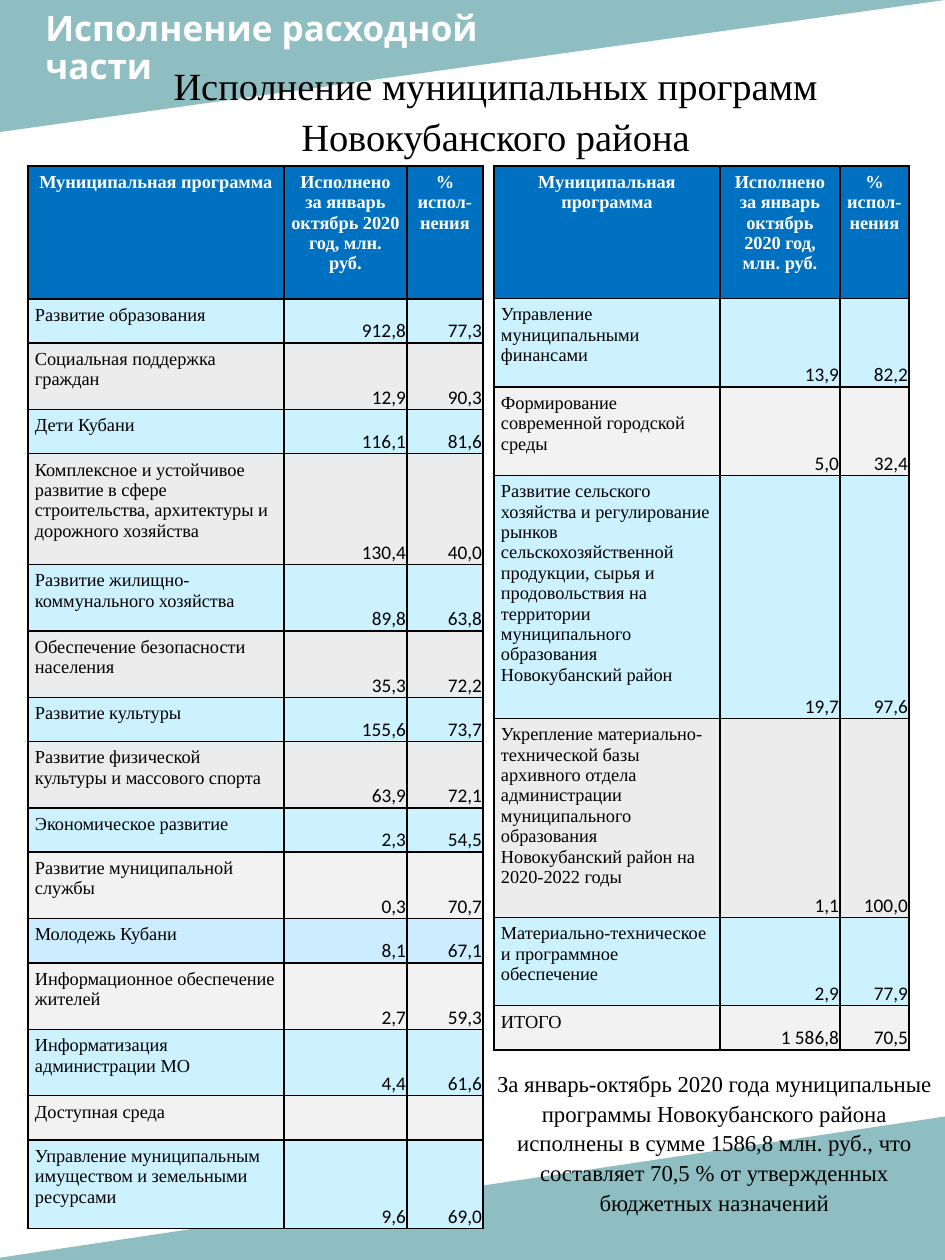
from lxml.etree import SubElement
from pptx import Presentation
from pptx.dml.color import RGBColor
from pptx.enum.shapes import MSO_SHAPE
from pptx.enum.text import MSO_ANCHOR, MSO_AUTO_SIZE, PP_ALIGN
from pptx.oxml.ns import qn
from pptx.util import Pt

SCALE = 914400 / 126
TEAL = RGBColor(0x51, 0x9A, 0xA0)
BLUE = RGBColor(0x00, 0x70, 0xC0)
AQUA = RGBColor(0xCD, 0xF2, 0xFF)
SKY = RGBColor(0xCC, 0xEC, 0xFF)
GRAY = RGBColor(0xEC, 0xEC, 0xEC)
PALE = RGBColor(0xF2, 0xF2, 0xF2)
WHITE = RGBColor(0xFF, 0xFF, 0xFF)
BLACK = RGBColor(0x00, 0x00, 0x00)

SERIF = "Times New Roman"
HEAD = {"name": SERIF, "size": Pt(10.5), "bold": True, "color": WHITE}
NAME = {"name": SERIF, "size": Pt(10.5), "bold": False, "color": BLACK}
VALUE = {"name": "Calibri", "size": Pt(11), "bold": False, "color": BLACK}
BANNER = {"name": "Karla", "size": Pt(20), "bold": True, "color": WHITE}
TITLE = {"name": SERIF, "size": Pt(22), "bold": False, "color": BLACK}
NOTE = {"name": SERIF, "size": Pt(13), "bold": False, "color": BLACK}

HEADER = ("Муниципальная программа",
          "Исполнено за январь октябрь 2020 год, млн. руб.",
          "% испол-нения", 5, BLUE)
LEFT_ROWS = [
    ("Развитие образования", "912,8", "77,3", 1, AQUA),
    ("Социальная поддержка граждан", "12,9", "90,3", 2, GRAY),
    ("Дети Кубани", "116,1", "81,6", 1, AQUA),
    ("Комплексное и устойчивое развитие в сфере строительства, архитектуры "
     "и дорожного хозяйства", "130,4", "40,0", 4, GRAY),
    ("Развитие жилищно-коммунального хозяйства", "89,8", "63,8", 2, AQUA),
    ("Обеспечение безопасности населения", "35,3", "72,2", 2, GRAY),
    ("Развитие культуры", "155,6", "73,7", 1, AQUA),
    ("Развитие физической культуры и массового спорта", "63,9", "72,1", 2, GRAY),
    ("Экономическое развитие", "2,3", "54,5", 1, AQUA),
    ("Развитие муниципальной службы", "0,3", "70,7", 2, PALE),
    ("Молодежь Кубани", "8,1", "67,1", 1, SKY),
    ("Информационное обеспечение жителей", "2,7", "59,3", 2, PALE),
    ("Информатизация администрации МО", "4,4", "61,6", 2, AQUA),
    ("Доступная среда", "", "", 1, PALE),
    ("Управление муниципальным имуществом и земельными ресурсами",
     "9,6", "69,0", 3, AQUA),
]
RIGHT_ROWS = [
    ("Управление муниципальными финансами", "13,9", "82,2", 3, AQUA),
    ("Формирование современной городской среды", "5,0", "32,4", 3, PALE),
    ("Развитие сельского хозяйства и регулирование рынков "
     "сельскохозяйственной продукции, сырья и продовольствия на территории "
     "муниципального образования Новокубанский район", "19,7", "97,6", 10, AQUA),
    ("Укрепление материально-технической базы архивного отдела администрации "
     "муниципального образования Новокубанский район на 2020-2022 годы",
     "1,1", "100,0", 8, GRAY),
    ("Материально-техническое и программное обеспечение", "2,9", "77,9", 3, AQUA),
    ("ИТОГО", "1 586,8", "70,5", 1, PALE),
]


def px(n):
    """Turn px into EMU."""
    return round(n * SCALE)


def place(sp, box):
    """Move a shape to a px box."""
    for key, n in zip(("left", "top", "width", "height"), box):
        setattr(sp, key, px(n))


def write(tf, lines, fmt, align, spacing=1.0):
    """Fill a text frame with one formatted paragraph per line."""
    for i, line in enumerate(lines):
        p = tf.add_paragraph() if i else tf.paragraphs[0]
        p.alignment, p.line_spacing = align, spacing
        if not line:
            continue
        r = p.add_run()
        r.text = line
        for key, value in fmt.items():
            if key == "color":
                r.font.color.rgb = value
            else:
                setattr(r.font, key, value)


def triangle(s, box, flip):
    """Draw a translucent corner triangle, turned and flipped."""
    sp = s.shapes.add_shape(MSO_SHAPE.RIGHT_TRIANGLE, *map(px, box))
    sp.shadow.inherit = False
    sp.rotation = 180
    sp._element.spPr.find(qn("a:xfrm")).set(flip, "1")
    sp.fill.solid()
    sp.fill.fore_color.rgb = TEAL
    color = next(sp._element.spPr.iter(qn("a:srgbClr")))
    SubElement(color, qn("a:alpha"), val="64000")
    sp.line.fill.background()


def text_block(sp, box, lines, fmt, align, spacing):
    """Set wrapped, top-anchored text in a box or placeholder."""
    place(sp, box)
    tf = sp.text_frame
    tf.word_wrap = True
    tf.auto_size = MSO_AUTO_SIZE.NONE
    tf.vertical_anchor = MSO_ANCHOR.TOP
    write(tf, lines, fmt, align, spacing)


def border(cell):
    """Outline a cell in thin black."""
    tc_pr = cell._tc.get_or_add_tcPr()
    for side in ("lnL", "lnR", "lnT", "lnB"):
        ln = SubElement(tc_pr, qn(f"a:{side}"), w=str(Pt(0.96)))
        fill = SubElement(ln, qn("a:solidFill"))
        SubElement(fill, qn("a:srgbClr"), val=str(BLACK))


def fill_cell(cell, text, color, fmt, align, anchor, margins):
    """Format one table cell and write its text."""
    border(cell)
    cell.fill.solid()
    cell.fill.fore_color.rgb = color
    cell.vertical_anchor = anchor
    for side, n in zip(("left", "top", "right", "bottom"), margins):
        setattr(cell, f"margin_{side}", px(n))
    write(cell.text_frame, [text], fmt, align)


def program_table(s, box, widths, rows):
    """Build a table whose row heights follow their line counts."""
    rows = [HEADER, *rows]
    table = s.shapes.add_table(len(rows), len(widths), *map(px, box)).table
    table.first_row = table.horz_banding = False
    for column, width in zip(table.columns, widths):
        column.width = px(width)
    unit = box[3] / sum(row[3] + 1 for row in rows)
    for i, (*texts, lines, color) in enumerate(rows):
        table.rows[i].height = px(unit * (lines + 1))
        for j, text in enumerate(texts):
            if i == 0:
                style = HEAD, PP_ALIGN.CENTER, MSO_ANCHOR.TOP, (7, 6, 7, 6)
            elif j == 0:
                style = NAME, PP_ALIGN.LEFT, MSO_ANCHOR.TOP, (7, 6, 7, 6)
            else:
                style = VALUE, PP_ALIGN.RIGHT, MSO_ANCHOR.BOTTOM, (1, 1, 1, 0)
            fill_cell(table.cell(i, j), text, color, *style)


def build():
    """Assemble and save the slide."""
    prs = Presentation()
    prs.slide_width, prs.slide_height = px(945), px(1260)
    s = prs.slides.add_slide(prs.slide_layouts[5])
    triangle(s, (0, 0, 945, 132), "flipH")
    triangle(s, (-16, 1116, 964, 144), "flipV")
    text_block(s.shapes.add_textbox(0, 0, 0, 0), (33, 5, 614, 97),
               ["Исполнение расходной", "части"], BANNER, PP_ALIGN.LEFT, 0.9)
    title = s.shapes.title
    title._element.getparent().append(title._element)
    text_block(title, (81, 52, 829, 105),
               ["Исполнение муниципальных программ Новокубанского района"],
               TITLE, PP_ALIGN.CENTER, 1.09)
    program_table(s, (28, 166, 455, 1063), (256, 123, 76), LEFT_ROWS)
    program_table(s, (494, 166, 415, 884), (226, 120, 69), RIGHT_ROWS)
    text_block(s.shapes.add_textbox(0, 0, 0, 0), (478, 1061, 472, 150),
               ["За январь-октябрь 2020 года муниципальные программы "
                "Новокубанского района исполнены в сумме 1586,8 млн. руб., что "
                "составляет 70,5 % от утвержденных бюджетных назначений"],
               NOTE, PP_ALIGN.CENTER, 1.09)
    prs.save("out.pptx")


if __name__ == "__main__":
    build()
